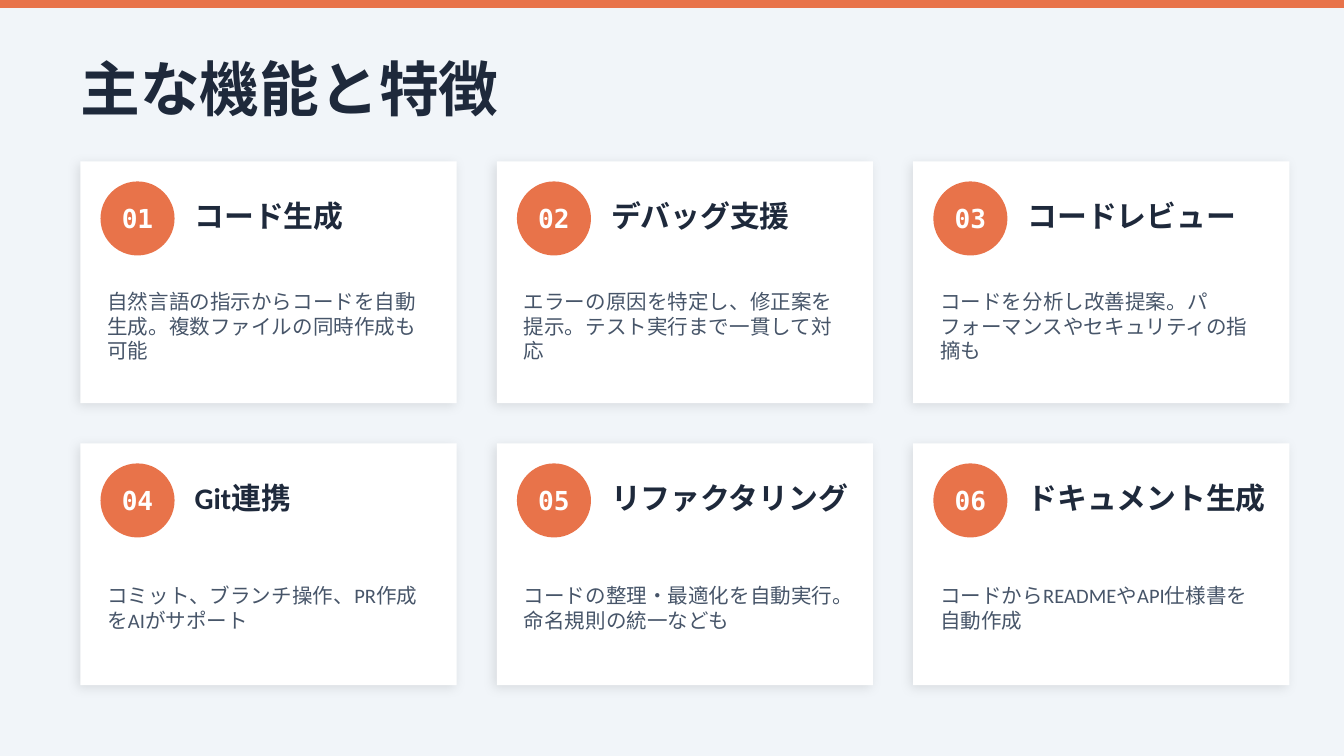
from dataclasses import dataclass

from lxml import etree
from pptx import Presentation
from pptx.dml.color import RGBColor
from pptx.enum.shapes import MSO_SHAPE
from pptx.enum.text import MSO_ANCHOR, PP_ALIGN
from pptx.oxml.ns import qn
from pptx.shapes.autoshape import Shape
from pptx.slide import Slide
from pptx.util import Cm, Pt

RECT = MSO_SHAPE.RECTANGLE
OVAL = MSO_SHAPE.OVAL
MIDDLE = MSO_ANCHOR.MIDDLE
LEFT = PP_ALIGN.LEFT
CENTER = PP_ALIGN.CENTER

COLORS = {
    "page": "F1F5F9",
    "accent": "E8734A",
    "card": "FFFFFF",
    "dark": "1E293B",
    "body": "475569",
    "shade": "000000",
}
FORMATS = {
    "title": {"name": "Montserrat", "size": Pt(32), "bold": True},
    "number": {"name": "DejaVu Sans Mono", "size": Pt(14), "bold": True},
    "label": {"name": "Calibri", "size": Pt(16), "bold": True},
    "body": {"name": "Calibri", "size": Pt(11), "bold": False},
}
COLS = 3
CARD_X, CARD_Y = 1.52, 3.05
CARD_W, CARD_H = 7.11, 4.57
GAP = 0.76


@dataclass
class Box:
    """A place on the slide, in centimetres."""
    x: float
    y: float
    w: float
    h: float

    def inner(self, x: float, y: float, w: float, h: float) -> "Box":
        """Return a box placed relative to this one's corner."""
        return Box(self.x + x, self.y + y, w, h)

    def sides(self) -> tuple[Cm, Cm, Cm, Cm]:
        return Cm(self.x), Cm(self.y), Cm(self.w), Cm(self.h)


@dataclass
class Feature:
    label: str
    body: str


FEATURES = [
    Feature("コード生成", "自然言語の指示からコードを自動生成。複数ファイルの同時作成も可能"),
    Feature("デバッグ支援", "エラーの原因を特定し、修正案を提示。テスト実行まで一貫して対応"),
    Feature("コードレビュー", "コードを分析し改善提案。パフォーマンスやセキュリティの指摘も"),
    Feature("Git連携", "コミット、ブランチ操作、PR作成をAIがサポート"),
    Feature("リファクタリング", "コードの整理・最適化を自動実行。命名規則の統一なども"),
    Feature("ドキュメント生成", "コードからREADMEやAPI仕様書を自動作成"),
]


def color(key: str) -> RGBColor:
    return RGBColor.from_string(COLORS[key])


def add_shape(slide: Slide, kind: MSO_SHAPE, box: Box, fill: str) -> Shape:
    shape = slide.shapes.add_shape(kind, *box.sides())
    shape.shadow.inherit = False
    shape.fill.solid()
    shape.fill.fore_color.rgb = color(fill)
    shape.line.fill.background()
    return shape


def add_shade(shape: Shape) -> None:
    """Give the shape a soft outer shadow towards the lower left."""
    effects = shape._element.spPr.find(qn("a:effectLst"))
    shade = etree.SubElement(
        effects, qn("a:outerShdw"), blurRad=str(Pt(6)), dist=str(Pt(2)),
        dir=str(135 * 60000), algn="bl", rotWithShape="0")
    tint = etree.SubElement(shade, qn("a:srgbClr"), val=COLORS["shade"])
    etree.SubElement(tint, qn("a:alpha"), val="10000")


def add_text(slide: Slide, box: Box, text: str, style: str, ink: str,
             align: PP_ALIGN = LEFT) -> None:
    frame = slide.shapes.add_textbox(*box.sides()).text_frame
    layout = {"word_wrap": True, "vertical_anchor": MIDDLE, "margin_left": 0,
              "margin_right": 0, "margin_top": 0, "margin_bottom": 0}
    for key, value in layout.items():
        setattr(frame, key, value)
    para = frame.paragraphs[0]
    para.alignment = align
    run = para.add_run()
    run.text = text
    for key, value in FORMATS[style].items():
        setattr(run.font, key, value)
    run.font.color.rgb = color(ink)


def add_card(slide: Slide, index: int, item: Feature) -> None:
    row, col = divmod(index, COLS)
    card = Box(CARD_X + col * (CARD_W + GAP), CARD_Y + row * (CARD_H + GAP),
               CARD_W, CARD_H)
    badge = card.inner(0.38, 0.38, 1.4, 1.4)
    add_shade(add_shape(slide, RECT, card, "card"))
    add_shape(slide, OVAL, badge, "accent")
    add_text(slide, badge, f"{index + 1:02}", "number", "card", CENTER)
    add_text(slide, card.inner(2.16, 0.46, 4.57, 1.14), item.label,
             "label", "dark")
    add_text(slide, card.inner(0.51, 2.03, 6.1, 2.16), item.body,
             "body", "body")


def main() -> None:
    deck = Presentation()
    deck.slide_width, deck.slide_height = Cm(25.4), Cm(14.29)
    slide = deck.slides.add_slide(deck.slide_layouts[6])
    slide.background.fill.solid()
    slide.background.fill.fore_color.rgb = color("page")
    add_shape(slide, RECT, Box(0, 0, 25.4, 0.15), "accent")
    add_text(slide, Box(CARD_X, 0.76, 20.32, 1.78), "主な機能と特徴",
             "title", "dark")
    for index, item in enumerate(FEATURES):
        add_card(slide, index, item)
    deck.save("out.pptx")


if __name__ == "__main__":
    main()
